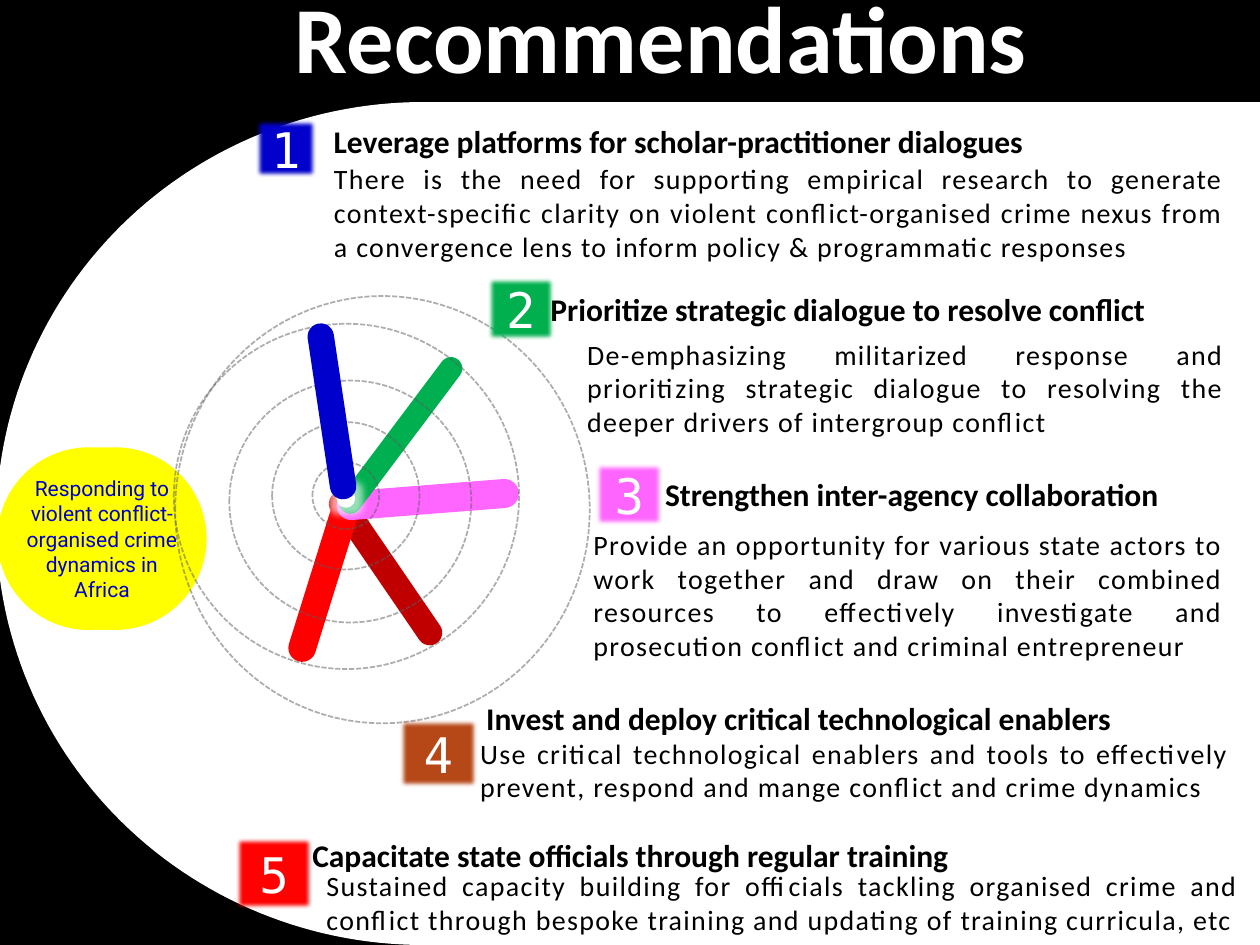
from math import cos, pi, sin

from lxml.etree import SubElement
from pptx import Presentation
from pptx.dml.color import RGBColor
from pptx.enum.dml import MSO_LINE
from pptx.enum.shapes import MSO_SHAPE
from pptx.enum.text import MSO_ANCHOR, MSO_AUTO_SIZE, PP_ALIGN
from pptx.oxml.ns import qn
from pptx.util import Inches, Pt

COLORS = {
    "black": "000000", "white": "FFFFFF", "yellow": "FFFF00",
    "blue": "0000CC", "green": "00B050", "pink": "FF66FF",
    "brown": "B74919", "red": "FF0000", "dark red": "C00000",
    "gray": "5E5D5E",
}

ITEMS = [
    ("blue", (2.03, 0.95, 0.48, 0.46),
     "Leverage platforms for scholar-practitioner dialogues",
     (2.55, 0.92, 6.59, 0.4), 1,
     "There is the need for supporting empirical research to generate "
     "context-specific clarity on violent conflict-organised crime nexus "
     "from a convergence lens to inform policy & programmatic responses",
     (2.63, 1.26, 7.11, 0.85)),
    ("green", (3.87, 2.2, 0.53, 0.5),
     "Prioritize strategic dialogue to resolve conflict",
     (4.27, 2.18, 5.61, 0.46), 1.3,
     "De-emphasizing militarized response and prioritizing strategic "
     "dialogue to resolving the deeper drivers of intergroup conflict",
     (4.64, 2.65, 5.1, 0.85)),
    ("pink", (4.73, 3.68, 0.53, 0.49),
     "Strengthen inter-agency collaboration",
     (5.18, 3.72, 4.66, 0.4), 1,
     "Provide an opportunity for various state actors to work together and "
     "draw on their combined resources to effectively investigate and "
     "prosecution conflict and criminal entrepreneur",
     (4.69, 4.16, 5.04, 1.12)),
    ("brown", (3.17, 5.71, 0.62, 0.54),
     "Invest and deploy critical technological enablers",
     (3.76, 5.5, 5.99, 0.4), 1,
     "Use critical technological enablers and tools to effectively prevent, "
     "respond and mange conflict and crime dynamics",
     (3.79, 5.82, 5.99, 0.58)),
    ("red", (1.87, 6.65, 0.61, 0.57),
     "Capacitate state officials through regular training",
     (2.38, 6.51, 6.82, 0.46), 1.3,
     "Sustained capacity building for officials tackling organised crime and "
     "conflict through bespoke training and updating of training curricula, etc",
     (2.57, 6.87, 7.29, 0.58)),
]

BARS = [
    ("dark red", (2.96, 3.79, 0.2, 1.44), 325.6),
    ("red", (2.47, 3.84, 0.22, 1.44), 197.3),
    ("pink", (3.28, 3.24, 0.23, 1.45), 85.5),
    ("green", (3.09, 2.7, 0.18, 1.51), 216.9),
]
FRONT_BAR = ("blue", (2.53, 2.56, 0.21, 1.41), 351.5)

RINGS = [
    (2.48, 3.67, 0.53, 0.53),
    (2.16, 3.35, 1.17, 1.17),
    (1.38, 2.57, 2.74, 2.74),
    (1.39, 2.35, 3.29, 3.39),
    (1.82, 3.02, 1.92, 1.92),
]


def rgb(name):
    return RGBColor.from_string(COLORS[name])


class SlideBuilder:
    text_font = "Calibri"
    number_font = "DejaVu Sans Mono"
    hub_font = "Roboto"

    def __init__(self, slide):
        self.slide = slide
        fill = slide.background.fill
        fill.solid()
        fill.fore_color.rgb = rgb("black")

    def set_text(self, sp, text, font, size, color, align, bold=False,
                 anchor=MSO_ANCHOR.MIDDLE, inset=None, line=1, spacing=None):
        tf = sp.text_frame
        tf.word_wrap = True
        tf.auto_size = MSO_AUTO_SIZE.NONE
        tf.vertical_anchor = anchor
        if inset is not None:
            tf.margin_left = tf.margin_right = Inches(inset)
            tf.margin_top = tf.margin_bottom = Inches(inset)
        tf.text = text
        p = tf.paragraphs[0]
        p.alignment = align
        p.line_spacing = line
        p.font.name = font
        p.font.size = Pt(size)
        p.font.bold = bold
        p.font.color.rgb = rgb(color)
        if spacing is not None:
            r_pr = p.runs[0]._r.get_or_add_rPr()
            r_pr.set("spc", str(int(spacing * 100)))

    def title(self, text, box):
        sp = self.slide.shapes.title
        sp.left, sp.top, sp.width, sp.height = map(Inches, box)
        self.set_text(sp, text, self.text_font, 54, "white", PP_ALIGN.CENTER,
                      bold=True, anchor=MSO_ANCHOR.TOP)

    def shape(self, kind, box, color=None, adj=None):
        sp = self.slide.shapes.add_shape(kind, *map(Inches, box))
        sp.shadow.inherit = False
        if adj is not None:
            sp.adjustments[0] = adj
        if color:
            sp.fill.solid()
            sp.fill.fore_color.rgb = rgb(color)
        else:
            sp.fill.background()
        sp.line.fill.background()
        return sp

    def effect(self, sp, tag, radius):
        effects = sp._element.spPr.find(qn("a:effectLst"))
        return SubElement(effects, qn(tag), rad=str(int(Pt(radius))))

    def panel(self, left, top, right, bottom, radius):
        middle, half = (top + bottom) / 2, (bottom - top) / 2
        steps = 120
        angles = [pi / 2 + pi * i / steps for i in range(steps + 1)]
        arc = [(Inches(left + radius + radius * cos(a)),
                Inches(middle - half * sin(a))) for a in angles]
        fb = self.slide.shapes.build_freeform(Inches(right), Inches(top))
        fb.add_line_segments(arc + [(Inches(right), Inches(bottom))])
        sp = fb.convert_to_shape()
        sp.shadow.inherit = False
        sp.fill.solid()
        sp.fill.fore_color.rgb = rgb("white")
        sp.line.fill.background()

    def hub(self, text, box):
        sp = self.shape(MSO_SHAPE.ROUNDED_RECTANGLE, box, "yellow", 0.5)
        self.set_text(sp, text, self.hub_font, 12, "blue", PP_ALIGN.CENTER, inset=0)

    def bar(self, color, box, angle):
        sp = self.shape(MSO_SHAPE.ROUNDED_RECTANGLE, box, color, 0.5)
        sp.rotation = angle

    def pivot(self, box):
        sp = self.shape(MSO_SHAPE.OVAL, box, "white")
        glow = self.effect(sp, "a:glow", 8)
        clr = SubElement(glow, qn("a:srgbClr"), val=COLORS["white"])
        SubElement(clr, qn("a:alpha"), val="60000")

    def ring(self, box):
        sp = self.shape(MSO_SHAPE.OVAL, box)
        sp.line.color.rgb = rgb("gray")
        sp.line.width = Pt(1)
        sp.line.dash_style = MSO_LINE.SQUARE_DOT
        clr = sp._element.spPr.find(qn("a:ln")).find(".//" + qn("a:srgbClr"))
        SubElement(clr, qn("a:alpha"), val="50000")

    def badge(self, number, color, box):
        sp = self.shape(MSO_SHAPE.ROUNDED_RECTANGLE, box, color, 0.02)
        self.effect(sp, "a:softEdge", 2.5)
        self.set_text(sp, str(number), self.number_font, 28, "white", PP_ALIGN.CENTER)

    def heading(self, text, box, line):
        sp = self.slide.shapes.add_textbox(*map(Inches, box))
        self.set_text(sp, text, self.text_font, 18, "black", PP_ALIGN.LEFT,
                      bold=True, line=line)

    def body(self, text, box):
        sp = self.slide.shapes.add_textbox(*map(Inches, box))
        self.set_text(sp, text, self.text_font, 16, "black", PP_ALIGN.JUSTIFY,
                      inset=0.02, spacing=0.8)


def main():
    prs = Presentation()
    prs.slide_width, prs.slide_height = Inches(10), Inches(7.5)
    s = SlideBuilder(prs.slides.add_slide(prs.slide_layouts[5]))
    s.title("Recommendations", (1.32, -0.22, 7.85, 1.01))
    s.panel(-0.03, 0.81, 10, 7.5, 3.39)
    s.hub("Responding to violent conflict-organised crime dynamics in Africa",
          (-0.02, 3.55, 1.66, 1.45))
    for bar in BARS:
        s.bar(*bar)
    s.pivot((2.67, 3.88, 0.15, 0.15))
    for box in RINGS:
        s.ring(box)
    s.bar(*FRONT_BAR)
    for number, item in enumerate(ITEMS, 1):
        color, badge_box, heading, heading_box, line, body, body_box = item
        s.heading(heading, heading_box, line)
        s.body(body, body_box)
        s.badge(number, color, badge_box)
    prs.save("out.pptx")


if __name__ == "__main__":
    main()
